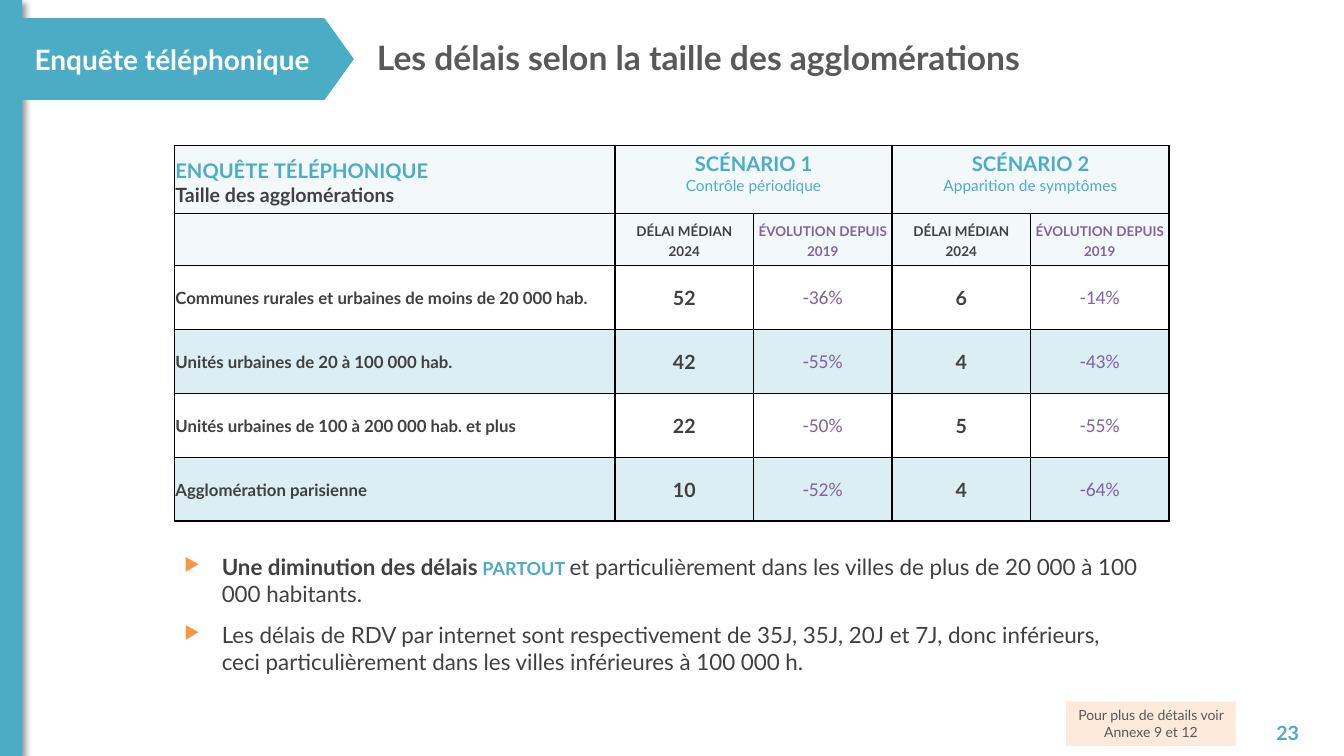
from lxml import etree
from pptx import Presentation
from pptx import util as u
from pptx.dml import color as c
from pptx.enum import shapes, text
from pptx.oxml import ns

TEAL, DARK, GREY, PURPLE = "4BACC6", "404040", "595959", "8064A2"
ORANGE, PEACH, WHITE, BLACK = "F79646", "FDEADA", "FFFFFF", "000000"
PALE, BAND = "F3F9FB", "DBEEF4"
LEFT, CENTER, RIGHT = text.PP_ALIGN.LEFT, text.PP_ALIGN.CENTER, text.PP_ALIGN.RIGHT
TOP, MIDDLE = text.MSO_ANCHOR.TOP, text.MSO_ANCHOR.MIDDLE


def rgb(value):
    return c.RGBColor.from_string(value)


def add_xml(parent, tag, **attributes):
    return etree.SubElement(parent, ns.qn(tag), attributes)


def style(size, color, bold=False, name="Lato", small=False):
    return {"size": u.Pt(size), "bold": bold, "name": name}, color, small


class SlideBuilder:
    def __init__(self, slide):
        self.slide = slide
        self.margins = {"margin_left": 0.25, "margin_right": 0.25,
                        "margin_top": 0.13, "margin_bottom": 0.13}
        self.cell_margins = {"margin_left": 0.03, "margin_right": 0.03,
                             "margin_top": 0.03, "margin_bottom": 0}

    def fill_text(self, frame, paragraphs, align=LEFT):
        for index, runs in enumerate(paragraphs):
            paragraph = frame.paragraphs[0] if index == 0 else frame.add_paragraph()
            paragraph.alignment = align
            for words, (font_format, color, small) in runs:
                run = paragraph.add_run()
                run.text = words
                for key, value in font_format.items():
                    setattr(run.font, key, value)
                run.font.color.rgb = rgb(color)
                if small:
                    run.font._element.set("cap", "small")

    def frame(self, shape, paragraphs, align=LEFT, anchor=TOP, **margins):
        frame = shape.text_frame
        frame.word_wrap = True
        frame.vertical_anchor = anchor
        for key, value in {**self.margins, **margins}.items():
            setattr(frame, key, u.Cm(value))
        self.fill_text(frame, paragraphs, align)
        return frame

    def textbox(self, box, paragraphs, **options):
        shape = self.slide.shapes.add_textbox(*map(u.Cm, box))
        return self.frame(shape, paragraphs, **options)

    def shape(self, kind, box, fill):
        shape = self.slide.shapes.add_shape(kind, *map(u.Cm, box))
        shape.shadow.inherit = False
        shape.fill.solid()
        shape.fill.fore_color.rgb = rgb(fill)
        shape.line.fill.background()
        return shape

    def shadow(self, shape):
        effects = shape._element.spPr.find(ns.qn("a:effectLst"))
        outer = add_xml(effects, "a:outerShdw", blurRad="50800", dist="38100",
                        dir="2700000", algn="tl", rotWithShape="0")
        color = add_xml(outer, "a:srgbClr", val=BLACK)
        add_xml(color, "a:alpha", val="40000")

    def bullets(self, box, paragraphs):
        frame = self.textbox(box, paragraphs)
        for paragraph in frame.paragraphs:
            paragraph.space_before = u.Pt(10)
            properties = paragraph._p.get_or_add_pPr()
            properties.set("marL", str(u.Cm(0.95)))
            properties.set("indent", str(u.Cm(-0.95)))
            add_xml(add_xml(properties, "a:buClr"), "a:srgbClr", val=ORANGE)
            add_xml(properties, "a:buSzPct", val="80000")
            add_xml(properties, "a:buChar", char="▶")

    def table(self, box, widths, heights):
        table = self.slide.shapes.add_table(
            len(heights), len(widths), *map(u.Cm, box)).table
        table.first_row = table.horz_banding = False
        for column, width in zip(table.columns, widths):
            column.width = u.Cm(width)
        for row, height in zip(table.rows, heights):
            row.height = u.Cm(height)
        return table

    def cell(self, cell, paragraphs, fill=None, align=CENTER, anchor=MIDDLE):
        cell.vertical_anchor = anchor
        for key, value in self.cell_margins.items():
            setattr(cell, key, u.Cm(value))
        properties = cell._tc.get_or_add_tcPr()
        for side in "LRTB":
            line = add_xml(properties, "a:ln" + side, w=str(u.Pt(1)))
            add_xml(add_xml(line, "a:solidFill"), "a:srgbClr", val=BLACK)
        if fill:
            cell.fill.solid()
            cell.fill.fore_color.rgb = rgb(fill)
        else:
            cell.fill.background()
        self.fill_text(cell.text_frame, paragraphs, align)


def delay_table(builder):
    table = builder.table((4.39, 3.66, 25.07, 9.47),
                          [11.11] + [3.49] * 4, [1.73, 1.3] + [1.61] * 4)
    heading = style(18, TEAL, True, small=True)
    builder.cell(table.cell(0, 0), [
        [("enquête téléphonique", heading)],
        [("Taille des agglomérations", style(14, DARK, True))]], PALE, LEFT)
    builder.cell(table.cell(1, 0), [], PALE)

    scenarios = [("scénario 1", "Contrôle périodique"),
                 ("scénario 2", "Apparition de symptômes")]
    median = style(12, DARK, True, small=True)
    evolution = style(12, PURPLE, True, small=True)
    for index, (name, reason) in enumerate(scenarios):
        column = 1 + 2 * index
        builder.cell(table.cell(0, column), [
            [(name, heading)], [(reason, style(11, TEAL))]], PALE, anchor=TOP)
        builder.cell(table.cell(0, column + 1), [], PALE)
        table.cell(0, column).merge(table.cell(0, column + 1))
        builder.cell(table.cell(1, column),
                     [[("délai médian", median)], [("2024", median)]], PALE)
        builder.cell(table.cell(1, column + 1),
                     [[("évolution depuis 2019", evolution)]], PALE)

    rows = [
        ("Communes rurales et urbaines de moins de 20 000 hab.", "52", "-36%", "6", "-14%"),
        ("Unités urbaines de 20 à 100 000 hab.", "42", "-55%", "4", "-43%"),
        ("Unités urbaines de 100 à 200 000 hab. et plus", "22", "-50%", "5", "-55%"),
        ("Agglomération parisienne", "10", "-52%", "4", "-64%"),
    ]
    delay, change = style(14, DARK, True), style(14, PURPLE, name="Calibri")
    styles = [style(12, DARK, True), delay, change, delay, change]
    for row, values in enumerate(rows, 2):
        for column, value in enumerate(values):
            builder.cell(table.cell(row, column), [[(value, styles[column])]],
                         BAND if row % 2 else None, CENTER if column else LEFT)


def main():
    presentation = Presentation()
    presentation.slide_width, presentation.slide_height = u.Cm(33.87), u.Cm(19.05)
    builder = SlideBuilder(presentation.slides.add_slide(presentation.slide_layouts[6]))

    side_bar = builder.shape(shapes.MSO_SHAPE.RECTANGLE, (0, 0, 0.56, 19.05), TEAL)
    builder.shadow(side_bar)
    builder.textbox((9.25, 0.81, 18.52, 1.73), [
        [("Les délais selon la taille des agglomérations", style(24, GREY, True))]])

    plain = style(16, DARK)
    builder.bullets((4.39, 13.82, 24.69, 3.4), [
        [("Une diminution des délais", style(16, DARK, True)),
         (" partout ", style(16, TEAL, True, small=True)),
         ("et particulièrement dans les villes de plus de 20 000 à 100 000 habitants.", plain)],
        [("Les délais de RDV par internet sont respectivement de 35J, 35J, 20J et 7J, "
          "donc inférieurs, ceci particulièrement dans les villes inférieures à 100 000 h.",
          plain)]])
    delay_table(builder)

    builder.textbox((31.09, 17.96, 1.9, 1.02), [[("23", style(14, TEAL, True))]],
                    align=RIGHT, anchor=MIDDLE)
    note = builder.shape(shapes.MSO_SHAPE.RECTANGLE, (26.87, 17.68, 4.27, 1.12), PEACH)
    builder.frame(note, [[("Pour plus de détails voir Annexe 9 et 12", style(10, GREY))]],
                  align=CENTER)
    banner = builder.shape(shapes.MSO_SHAPE.PENTAGON, (0.51, 0.46, 8.41, 2.06), TEAL)
    banner.adjustments[0] = 0.36
    builder.frame(banner, [[("Enquête téléphonique", style(20, WHITE, True))]],
                  align=CENTER, anchor=MIDDLE, margin_left=0, margin_right=0.38)

    presentation.save("out.pptx")


if __name__ == "__main__":
    main()
